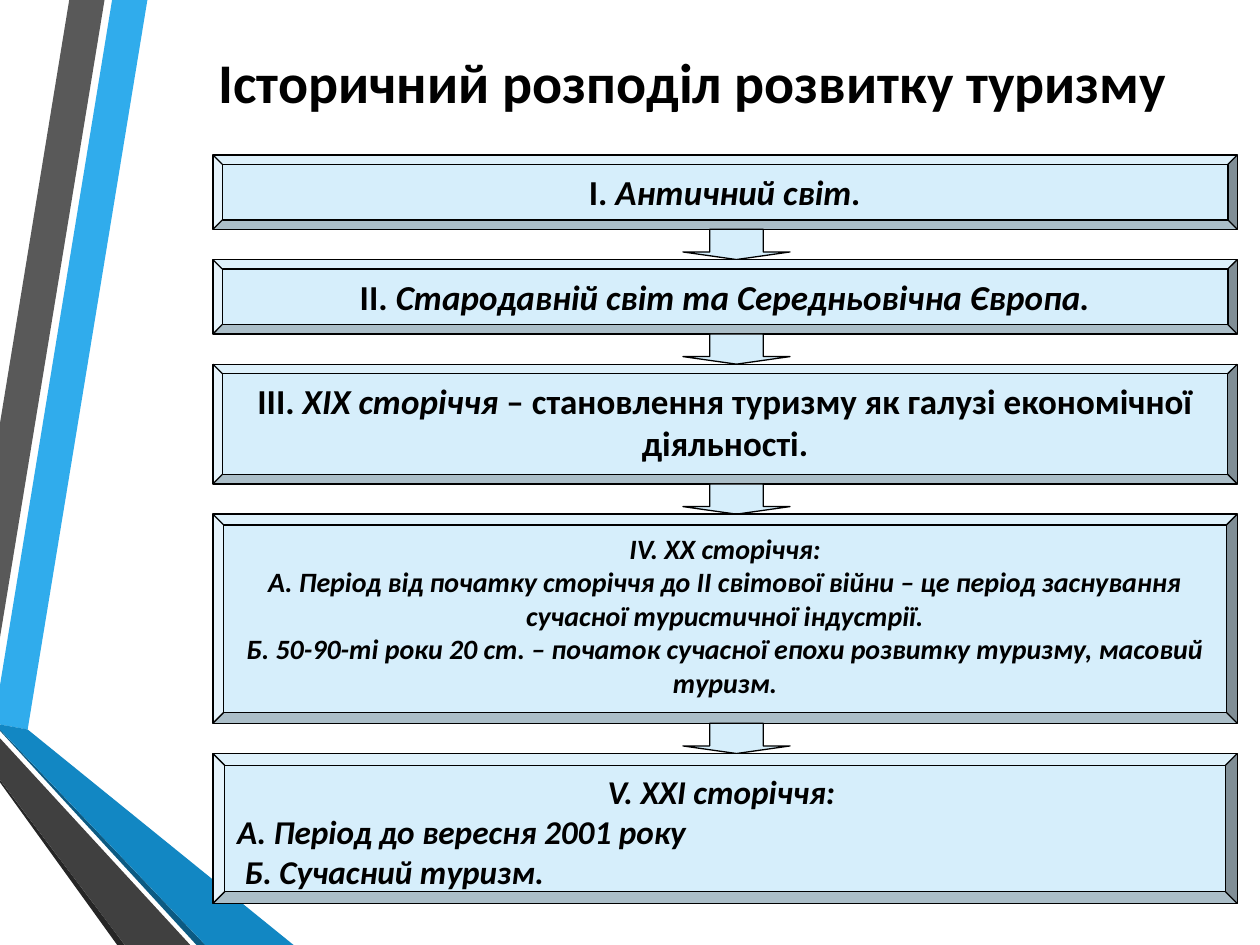
from pptx import Presentation
from pptx.dml.color import RGBColor
from pptx.enum.shapes import MSO_SHAPE
from pptx.enum.text import MSO_ANCHOR, PP_ALIGN
from pptx.util import Inches, Pt

WIDE, HIGH = Inches(10), Inches(7.5)
BEVEL, ARROW = MSO_SHAPE.BEVEL, MSO_SHAPE.DOWN_ARROW
MID, LEFT, JUST = PP_ALIGN.CENTER, PP_ALIGN.LEFT, PP_ALIGN.JUSTIFY
TOP, CENTRE = MSO_ANCHOR.TOP, MSO_ANCHOR.MIDDLE

BLACK = RGBColor(0x00, 0x00, 0x00)
PALE = RGBColor(0xD6, 0xEE, 0xFB)
SKY = RGBColor(0x30, 0xAC, 0xEC)
BLUE = RGBColor(0x12, 0x87, 0xC3)
NAVY = RGBColor(0x0C, 0x5A, 0x82)
GREY = RGBColor(0x59, 0x59, 0x59)
DARK = RGBColor(0x40, 0x40, 0x40)
COAL = RGBColor(0x26, 0x26, 0x26)

# All lengths below are percent of the slide's width or height.
BANDS = [
    (SKY, [(0, 72.53), (0, 76.67), (2.2, 77.2), (11.7, 0), (8.9, 0)]),
    (GREY, [(8.3, 0), (5.5, 0), (0, 44.8), (0, 67.47)]),
    (COAL, [(0, 82.53), (0, 82.8), (9.3, 100), (9.9, 100)]),
    (NAVY, [(0, 77.2), (0, 77.33), (15.6, 100), (16.3, 100)]),
    (BLUE, [(0, 77.2), (16.3, 100), (23.3, 100), (2.2, 77.2), (0, 76.67)]),
    (DARK, [(0, 82.53), (9.9, 100), (15.1, 100), (0, 78.13)]),
]

BOX_X, BOX_W, BOX_Y = 16.9, 81.3, 16.4
ARROW_X, ARROW_W, GAP = 54.2, 8.5, 3.2

# Height, bevel depth, text size, space after, paragraphs of (align, runs);
# a run is (text, italic).
STAGES = [
    (7.87, 0.125, 20, 10, [(MID, [("І. ", False), ("Античний світ.", True)])]),
    (7.87, 0.125, 20, 10, [(MID, [
        ("ІІ. ", False),
        ("Стародавній світ та Середньовічна Європа.", True)])]),
    (12.67, 0.079, 20, 10, [(MID, [
        ("ІІІ. ", False), ("XIX сторіччя", True),
        (" – становлення туризму як галузі економічної діяльності.", False)])]),
    (22.13, 0.052, 16, 0, [
        (MID, [("ІV. XX сторіччя:", True)]),
        (MID, [("А. Період від початку сторіччя до ІІ світової війни – "
                "це період заснування сучасної туристичної індустрії.", True)]),
        (MID, [("Б. 50-90-ті роки 20 ст. – початок сучасної епохи розвитку "
                "туризму, масовий туризм.", True)])]),
    (15.87, 0.079, 19, 0, [
        (MID, [("V. XXІ сторіччя: ", True)]),
        (LEFT, [("А. Період до вересня 2001 року", True)]),
        (JUST, [(" Б. Сучасний туризм.", True)])]),
]


def across(share):
    return round(WIDE * share / 100)


def down(share):
    return round(HIGH * share / 100)


def place(x, y, w, h):
    return across(x), down(y), across(w), down(h)


def write(frame, paras, size=20, after=0, anchor=TOP):
    frame.word_wrap = True
    frame.vertical_anchor = anchor
    for i, (align, runs) in enumerate(paras):
        para = frame.add_paragraph() if i else frame.paragraphs[0]
        para.alignment = align
        para.space_after = Pt(after)
        for text, slant in runs:
            run = para.add_run()
            run.text = text
            font = run.font
            font.name, font.size = "Calibri", Pt(size)
            font.bold, font.italic = True, slant
            font.color.rgb = BLACK


def paint(shape, fill, line=None):
    shape.shadow.inherit = False
    shape.fill.solid()
    shape.fill.fore_color.rgb = fill
    if line is None:
        shape.line.fill.background()
    else:
        shape.line.color.rgb = line
        shape.line.width = Pt(0.75)


def band(slide, fill, points):
    dots = [(across(x), down(y)) for x, y in points]
    build = slide.shapes.build_freeform(*dots[0])
    build.add_line_segments(dots[1:], close=True)
    paint(build.convert_to_shape(), fill)


def block(slide, kind, spot, *bends):
    """Add a pale outlined preset shape with the given adjustments."""
    shape = slide.shapes.add_shape(kind, *place(*spot))
    for i, bend in enumerate(bends):
        shape.adjustments[i] = bend
    paint(shape, PALE, BLACK)
    return shape


def title(slide, text):
    box = slide.shapes.add_textbox(*place(10, 4.27, 90, 8.53))
    write(box.text_frame, [(MID, [(text, False)])], size=32, anchor=CENTRE)


def chain(slide):
    """Stack the stages, with an arrow filling each gap."""
    y = BOX_Y
    for i, (high, depth, size, after, paras) in enumerate(STAGES):
        if i:
            block(slide, ARROW, (ARROW_X, y, ARROW_W, GAP), 0.5, 0.25)
            y += GAP
        box = block(slide, BEVEL, (BOX_X, y, BOX_W, high), depth)
        write(box.text_frame, paras, size=size, after=after)
        y += high


def main():
    deck = Presentation()
    deck.slide_width, deck.slide_height = WIDE, HIGH
    slide = deck.slides.add_slide(deck.slide_layouts[6])
    for fill, points in BANDS:
        band(slide, fill, points)
    title(slide, "Історичний розподіл розвитку туризму")
    chain(slide)
    deck.save("out.pptx")


if __name__ == "__main__":
    main()
